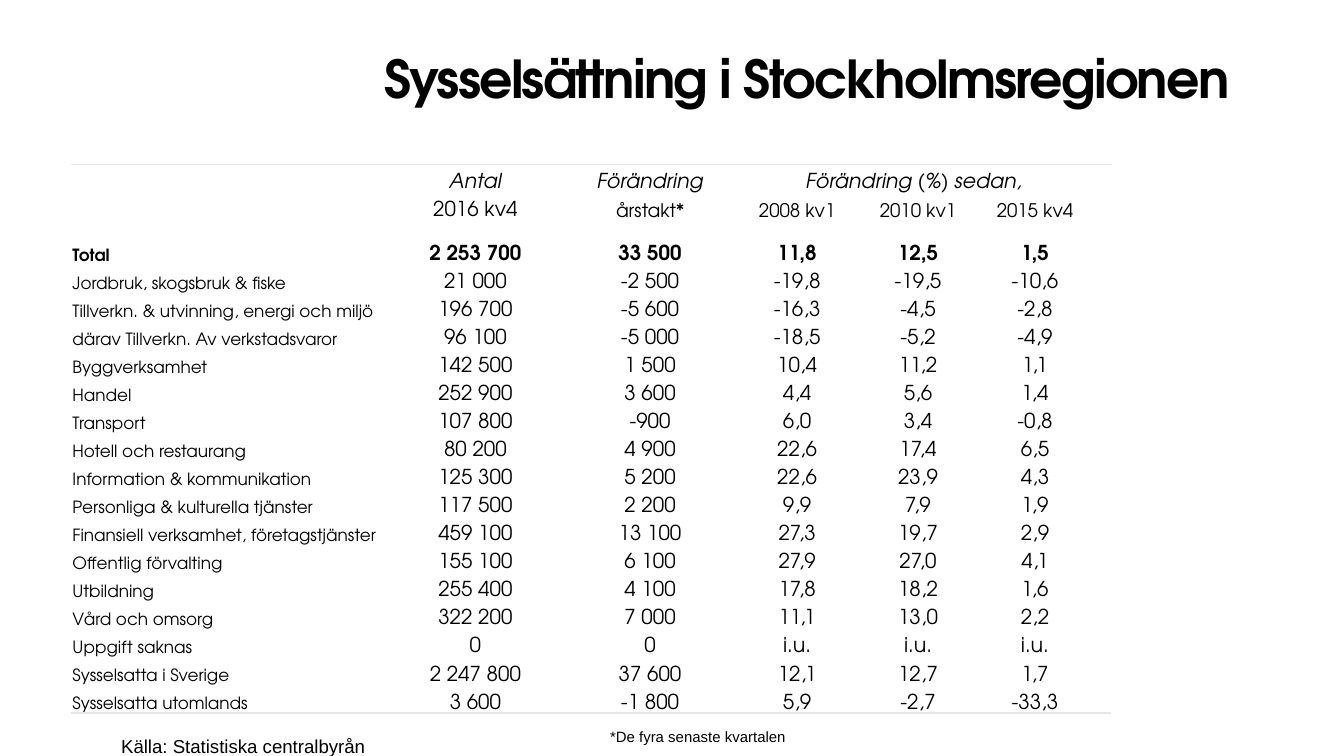
from lxml import etree
from pptx import Presentation
from pptx.dml.color import RGBColor
from pptx.enum.text import MSO_ANCHOR, PP_ALIGN
from pptx.oxml.ns import qn
from pptx.util import Cm, Pt

BOTTOM, TOP = MSO_ANCHOR.BOTTOM, MSO_ANCHOR.TOP
LEFT, CENTER = PP_ALIGN.LEFT, PP_ALIGN.CENTER
DISPLAY_FONT, NOTE_FONT = "TeX Gyre Adventor", "Arial"
INK, RULE = "000000", "E6E6E6"

COLUMN_WIDTHS = [6.02, 3.25, 3.35, 2.21, 2.36, 2.06, 0.41]
ROW_HEIGHT, TOTAL_HEIGHT = 0.53, 0.82
TOTAL_ROW = 2
EMPLOYMENT = [
    ("", "Antal", "Förändring", "Förändring (%) sedan,"),
    ("", "2016 kv4", "årstakt*", "2008 kv1", "2010 kv1", "2015 kv4"),
    ("Total", "2 253 700", "33 500", "11,8", "12,5", "1,5"),
    ("Jordbruk, skogsbruk & fiske", "21 000", "-2 500", "-19,8", "-19,5", "-10,6"),
    ("Tillverkn. & utvinning, energi och miljö", "196 700", "-5 600", "-16,3", "-4,5", "-2,8"),
    ("därav Tillverkn. Av verkstadsvaror", "96 100", "-5 000", "-18,5", "-5,2", "-4,9"),
    ("Byggverksamhet", "142 500", "1 500", "10,4", "11,2", "1,1"),
    ("Handel", "252 900", "3 600", "4,4", "5,6", "1,4"),
    ("Transport", "107 800", "-900", "6,0", "3,4", "-0,8"),
    ("Hotell och restaurang", "80 200", "4 900", "22,6", "17,4", "6,5"),
    ("Information & kommunikation", "125 300", "5 200", "22,6", "23,9", "4,3"),
    ("Personliga & kulturella tjänster", "117 500", "2 200", "9,9", "7,9", "1,9"),
    ("Finansiell verksamhet, företagstjänster", "459 100", "13 100", "27,3", "19,7", "2,9"),
    ("Offentlig förvalting", "155 100", "6 100", "27,9", "27,0", "4,1"),
    ("Utbildning", "255 400", "4 100", "17,8", "18,2", "1,6"),
    ("Vård och omsorg", "322 200", "7 000", "11,1", "13,0", "2,2"),
    ("Uppgift saknas", "0", "0", "i.u.", "i.u.", "i.u."),
    ("Sysselsatta i Sverige", "2 247 800", "37 600", "12,1", "12,7", "1,7"),
    ("Sysselsatta utomlands", "3 600", "-1 800", "5,9", "-2,7", "-33,3"),
]


def color(value):
    """Return the colour for a hex string."""
    return RGBColor.from_string(value)


def style(paragraph, font_name, size, bold=False, italic=False):
    """Set the font of a whole paragraph."""
    font = paragraph.font
    font.name, font.size = font_name, Pt(size)
    font.bold, font.italic = bold, italic
    font.color.rgb = color(INK)


def add_line_of_text(slide, box, text, font_name, size, bold=False):
    """Place one line of text without insets and return its paragraph."""
    frame = slide.shapes.add_textbox(*map(Cm, box)).text_frame
    frame.margin_left = frame.margin_right = frame.margin_top = frame.margin_bottom = 0
    frame.word_wrap, frame.vertical_anchor = True, TOP
    paragraph = frame.paragraphs[0]
    paragraph.text = text
    style(paragraph, font_name, size, bold)
    return paragraph


def add_title(slide, box):
    """Place the tightly spaced heading."""
    heading = add_line_of_text(slide, box, "Sysselsättning i Stockholmsregionen",
                               DISPLAY_FONT, 28, bold=True)
    heading.runs[0].font._element.set("spc", "-90")


def add_note(slide, box, text, size):
    """Place a note below the table."""
    note = add_line_of_text(slide, box, text, NOTE_FONT, size)
    note.line_spacing = Pt(24)


def set_borders(cell, ruled_edges):
    """Draw thin rules on the given edges of a cell and clear the others."""
    for edge in ("a:lnL", "a:lnR", "a:lnT", "a:lnB"):
        line = etree.SubElement(cell._tc.get_or_add_tcPr(), qn(edge), w=str(Pt(1)))
        if edge in ruled_edges:
            fill = etree.SubElement(line, qn("a:solidFill"))
            etree.SubElement(fill, qn("a:srgbClr"), val=RULE)
        else:
            etree.SubElement(line, qn("a:noFill"))


def fill_cell(cell, text, row, column):
    """Write and style one cell by its place in the table."""
    cell.margin_left = cell.margin_right = cell.margin_top = Cm(0.03)
    cell.margin_bottom = 0
    cell.vertical_anchor = BOTTOM
    cell.fill.background()
    paragraph = cell.text_frame.paragraphs[0]
    paragraph.text = text
    paragraph.alignment = CENTER if column else LEFT
    if column == 0:
        size = 9
    else:
        size = 10 if row == 1 and column > 1 else 11
    style(paragraph, DISPLAY_FONT, size, bold=row == TOTAL_ROW, italic=row == 0)
    if not text:
        etree.SubElement(paragraph._p, qn("a:endParaRPr"), sz=str(size * 100))


def add_employment_table(slide, box):
    """Place the employment table with rules above and below."""
    last = len(EMPLOYMENT) - 1
    table = slide.shapes.add_table(last + 1, len(COLUMN_WIDTHS), *map(Cm, box)).table
    table.first_row = table.horz_banding = False
    for column, width in zip(table.columns, COLUMN_WIDTHS):
        column.width = Cm(width)
    ruled_edges = {0: ("a:lnT",), last: ("a:lnB",)}
    for r, entries in enumerate(EMPLOYMENT):
        table.rows[r].height = Cm(TOTAL_HEIGHT if r == TOTAL_ROW else ROW_HEIGHT)
        for c in range(len(COLUMN_WIDTHS)):
            cell = table.cell(r, c)
            set_borders(cell, ruled_edges.get(r, ()))
            fill_cell(cell, entries[c] if c < len(entries) else "", r, c)
    table.cell(0, 3).merge(table.cell(0, 5))


def main():
    """Build and save the slide."""
    deck = Presentation()
    deck.slide_width, deck.slide_height = Cm(25.4), Cm(14.28)
    slide = deck.slides.add_slide(deck.slide_layouts[6])
    add_title(slide, (7.26, 0.88, 23.37, 2.03))
    add_note(slide, (2.29, 13.45, 5.2, 1.07), "Källa: Statistiska centralbyrån", 10)
    add_employment_table(slide, (1.34, 3.11, 19.63, 10.36))
    add_note(slide, (11.53, 13.23, 4, 2.54), "*De fyra senaste kvartalen", 8)
    deck.save("out.pptx")


if __name__ == "__main__":
    main()
